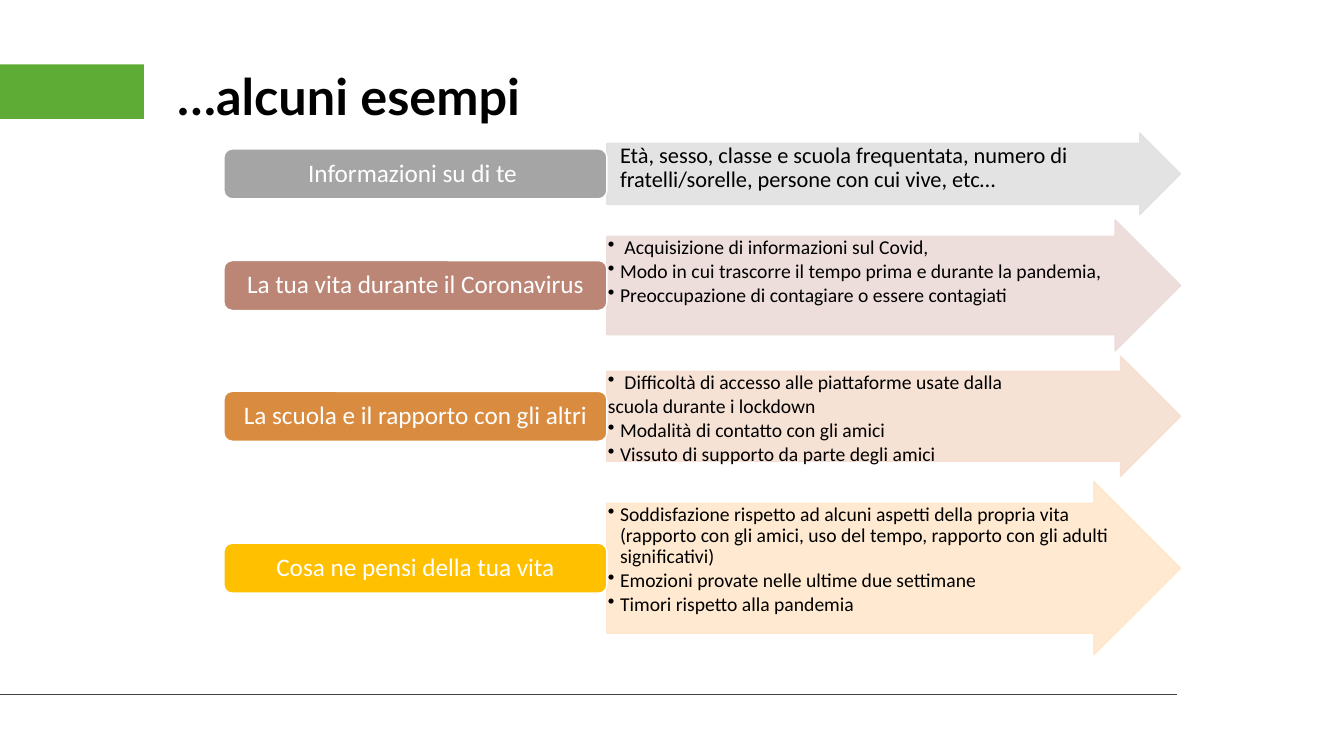
from lxml import etree
from pptx import Presentation
from pptx.dml.color import RGBColor
from pptx.enum.shapes import MSO_CONNECTOR, MSO_SHAPE as SHAPE
from pptx.enum.text import MSO_ANCHOR as ANCHOR, PP_ALIGN as ALIGN
from pptx.oxml.ns import qn
from pptx.util import Inches, Pt

# The slide is a grid of 100 columns by 100 rows.
COL = Inches(13.33) / 100
ROW = Inches(7.5) / 100
ARROW_LEFT, ARROW_W = 45.16, 42.68
LABEL_W, LABEL_H = 28.5, 6.6
FIRST_TOP, GAP = 17.6, 0.7

# Label, label colour, arrow colour, arrow rows, text size, (marker, text) items
TOPICS = [
    ("Informazioni su di te ", "A5A5A5", "E1E1E1", 10.8, 16, [
        ("plain", "Età, sesso, classe e scuola frequentata, numero di "
                  "fratelli/sorelle, persone con cui vive, etc…")]),
    ("La tua vita durante il Coronavirus", "BB8676", "ECDBD9", 17.33, 14, [
        ("bullet", " Acquisizione di informazioni sul Covid,"),
        ("bullet", "Modo in cui trascorre il tempo prima e durante la pandemia,"),
        ("bullet", "Preoccupazione di contagiare o essere contagiati")]),
    ("La scuola e il rapporto con gli altri", "D98B3F", "F6DED1", 15.87, 14, [
        ("bullet", " Difficoltà di accesso alle piattaforme usate dalla"),
        ("hanging", "scuola durante i lockdown"),
        ("bullet", "Modalità di contatto con gli amici"),
        ("bullet", "Vissuto di supporto da parte degli amici")]),
    ("Cosa ne pensi della tua vita", "FFC000", "FFE7CB", 22.93, 14, [
        ("bullet", "Soddisfazione rispetto ad alcuni aspetti della propria vita "
                   "(rapporto con gli amici, uso del tempo, rapporto con gli "
                   "adulti significativi)"),
        ("bullet", "Emozioni provate nelle ultime due settimane"),
        ("bullet", "Timori rispetto alla pandemia")]),
]


def rgb(color):
    return RGBColor.from_string(color)


def grid(left, top, width, height):
    return round(left * COL), round(top * ROW), round(width * COL), round(height * ROW)


def set_alpha(fill_parent, percent):
    color = fill_parent.find(f"{qn('a:solidFill')}/{qn('a:srgbClr')}")
    etree.SubElement(color, qn("a:alpha"), val=str(percent * 1000))


def add_block(s, kind, box, fill, line=None, alpha=None):
    sp = s.shapes.add_shape(kind, *grid(*box))
    sp.shadow.inherit = False
    sp.fill.solid()
    sp.fill.fore_color.rgb = rgb(fill)
    if line:
        sp.line.color.rgb = rgb(line)
        sp.line.width = Pt(1)
    else:
        sp.line.fill.background()
    if alpha:
        set_alpha(sp._element.spPr, alpha)
        set_alpha(sp.line._ln, alpha)
    return sp


def set_frame(sp, anchor, side=0.1, end=0.05):
    """Wrap the text of sp, with insets in inches at the sides and ends."""
    tf = sp.text_frame
    tf.word_wrap = True
    tf.vertical_anchor = anchor
    tf.margin_left = tf.margin_right = Inches(side)
    tf.margin_top = tf.margin_bottom = Inches(end)
    return tf


def write(p, text, size, color="000000", font="Calibri", bold=False,
          align=ALIGN.LEFT, after=0, marker=None):
    p.alignment = align
    p.line_spacing = 0.9
    p.space_after = Pt(after)
    if marker:
        pPr = p._p.get_or_add_pPr()
        pPr.set("marL", str(Inches(0.12)))
        pPr.set("indent", str(0 if marker == "plain" else Inches(-0.12)))
        if marker == "bullet":
            etree.SubElement(pPr, qn("a:buChar"), char="•")
    r = p.add_run()
    r.text = text
    r.font.size = Pt(size)
    r.font.name = font
    r.font.bold = bold
    r.font.color.rgb = rgb(color)


def add_title(s, text):
    sp = s.shapes.add_textbox(*grid(12.45, 8.8, 69.5, 7.07))
    tf = set_frame(sp, ANCHOR.TOP)
    write(tf.paragraphs[0], text, 36, font="Lato", bold=True)


def add_footer_line(s):
    x, y, width, _ = grid(0, 91.87, 87.55, 0)
    line = s.shapes.add_connector(MSO_CONNECTOR.STRAIGHT, x, y, width, y)
    line.line.color.rgb = rgb("404140")
    line.line.width = Pt(1)
    etree.SubElement(line._element.spPr, qn("a:effectLst"))


def add_arrow(s, top, height, color, size, items):
    sp = add_block(s, SHAPE.RIGHT_ARROW, (ARROW_LEFT, top, ARROW_W, height),
                   color, line=color, alpha=90)
    sp.adjustments[0], sp.adjustments[1] = 0.75, 0.5
    tf = set_frame(sp, ANCHOR.TOP, 0.01, 0.01)
    for i, (marker, text) in enumerate(items):
        p = tf.add_paragraph() if i else tf.paragraphs[0]
        write(p, text, size, after=2, marker=marker)


def add_label(s, middle, text, color):
    box = (ARROW_LEFT - LABEL_W, middle - LABEL_H / 2, LABEL_W, LABEL_H)
    sp = add_block(s, SHAPE.ROUNDED_RECTANGLE, box, color, line="FFFFFF")
    tf = set_frame(sp, ANCHOR.MIDDLE, 0.07, 0.04)
    write(tf.paragraphs[0], text, 18, color="FFFFFF", align=ALIGN.CENTER)


def main():
    prs = Presentation()
    prs.slide_width, prs.slide_height = Inches(13.33), Inches(7.5)
    s = prs.slides.add_slide(prs.slide_layouts[6])
    add_block(s, SHAPE.RECTANGLE, (0, 8.53, 10.7, 7.2), "5EAB36")
    add_footer_line(s)
    add_title(s, "…alcuni esempi")
    top = FIRST_TOP
    for label, label_color, arrow_color, height, size, items in TOPICS:
        add_arrow(s, top, height, arrow_color, size, items)
        add_label(s, top + height / 2, label, label_color)
        top += height + GAP
    prs.save("out.pptx")


if __name__ == "__main__":
    main()
